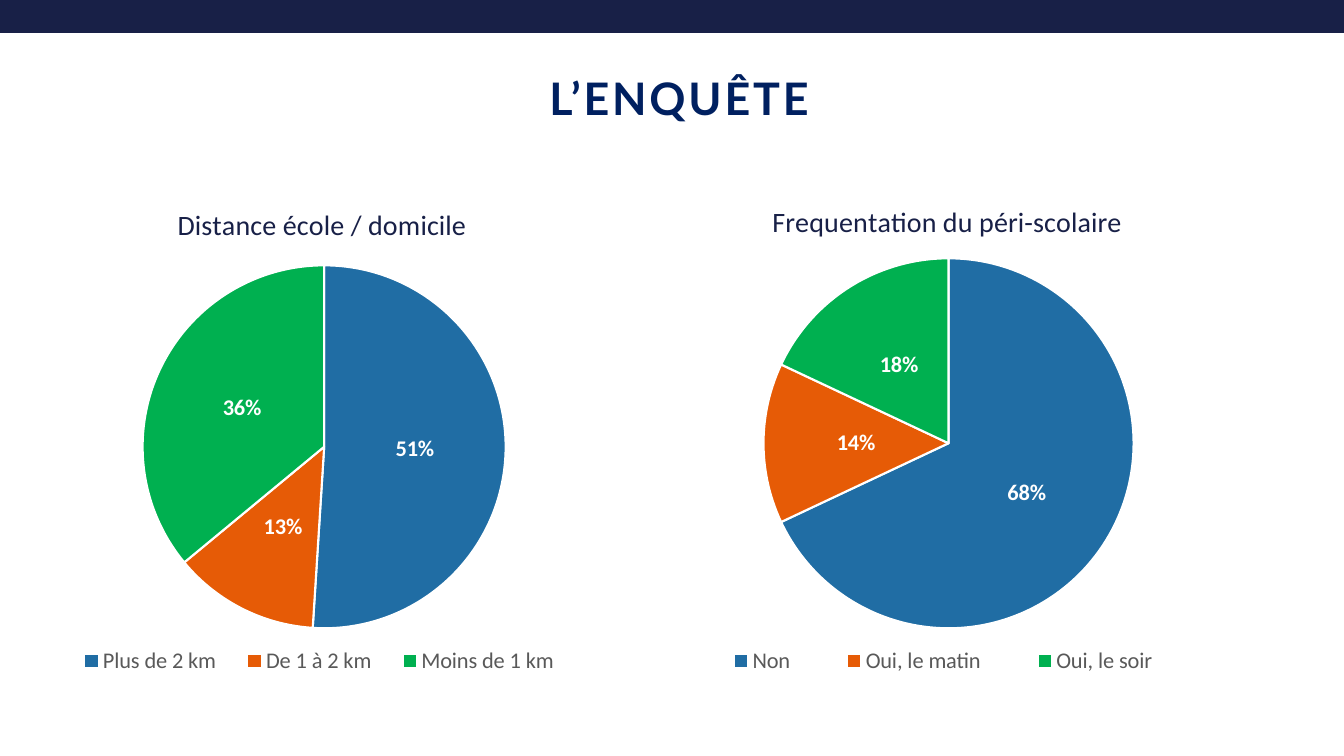
from dataclasses import dataclass, replace

from lxml import etree
from pptx import Presentation
from pptx import util as u
from pptx.chart.data import CategoryChartData
from pptx.dml.color import RGBColor
from pptx.enum import chart as charts, shapes, text
from pptx.oxml.ns import qn


@dataclass(frozen=True)
class Theme:
    navy: str = "182047"
    heading: str = "002060"
    grey: str = "595959"
    white: str = "FFFFFF"
    slices: tuple[str, ...] = ("206DA4", "E65B06", "00B050")
    heading_font: str = "Lato"
    chart_font: str = "Calibri"
    heading_size: int = 32
    question_size: int = 20
    label_size: int = 16


@dataclass(frozen=True)
class Area:
    """Percentages of the width and height of whatever holds the area."""
    left: float
    top: float
    width: float = 0
    height: float = 0

    def on_slide(self) -> tuple[int, int, int, int]:
        return (int(self.left * WIDTH / 100), int(self.top * HEIGHT / 100),
                int(self.width * WIDTH / 100), int(self.height * HEIGHT / 100))


@dataclass(frozen=True)
class Survey:
    question: str
    answers: dict[str, int]
    question_at: Area
    pie: Area


THEME = Theme()
WIDTH, HEIGHT = u.Inches(13.33), u.Inches(7.5)
BAR = Area(0, 0, 100, 4.2)
HEADING = Area(4.28, 4.4, 92.5, 17.1)
FIRST_CHART = Area(0.9, 24.4, 46.44, 66.5)
LEGEND = Area(7.7, 89.8, 83, 10)
SURVEYS = (
    Survey("Distance école / domicile",
           {"Plus de 2 km": 51, "De 1 à 2 km": 13, "Moins de 1 km": 36},
           Area(25.7, 3), Area(20.9, 16.1, 58.2, 72.2)),
    Survey("Frequentation du péri-scolaire",
           {"Non": 68, "Oui, le matin": 14, "Oui, le soir": 18},
           Area(21, 2.4), Area(20.4, 14.7, 59.3, 73.6)),
)


def style_font(font, *, size: int, color: str, name: str = THEME.chart_font,
               bold: bool = False) -> None:
    font.size, font.name, font.bold = u.Pt(size), name, bold
    font.color.rgb = RGBColor.from_string(color)


def write(frame, words: str, *, spacing: int = 0, **font_format) -> None:
    """Fill a text frame with one centred line; spacing is in points."""
    paragraph = frame.paragraphs[0]
    paragraph.alignment = text.PP_ALIGN.CENTER
    run = paragraph.add_run()
    run.text = words
    style_font(run.font, **font_format)
    if spacing:
        run.font._element.set("spc", str(spacing * 100))


def place(part, index: int, area: Area, inner: bool = False) -> None:
    """Give a chart part a manual layout as its child at index."""
    for old in part.findall(qn("c:layout")):
        part.remove(old)
    settings = {"layoutTarget": "inner"} if inner else {}
    settings |= {"xMode": "edge", "yMode": "edge",
                 "x": area.left / 100, "y": area.top / 100}
    if area.width:
        settings |= {"w": area.width / 100, "h": area.height / 100}
    layout = etree.Element(qn("c:layout"))
    manual = etree.SubElement(layout, qn("c:manualLayout"))
    for key, value in settings.items():
        etree.SubElement(manual, qn(f"c:{key}")).set("val", str(value))
    part.insert(index, layout)


def add_bar(slide) -> None:
    bar = slide.shapes.add_shape(shapes.MSO_SHAPE.RECTANGLE, *BAR.on_slide())
    bar.shadow.inherit = False
    bar.fill.solid()
    bar.fill.fore_color.rgb = bar.line.color.rgb = RGBColor.from_string(THEME.navy)
    bar.line.width = u.Pt(1.25)


def add_heading(slide, words: str) -> None:
    frame = slide.shapes.add_textbox(*HEADING.on_slide()).text_frame
    frame.word_wrap = True
    frame.vertical_anchor = text.MSO_ANCHOR.MIDDLE
    write(frame, words, size=THEME.heading_size, color=THEME.heading,
          name=THEME.heading_font, bold=True, spacing=2)


def add_survey(slide, survey: Survey, area: Area) -> None:
    data = CategoryChartData()
    data.categories = list(survey.answers)
    data.add_series("Series 1", list(survey.answers.values()))
    chart = slide.shapes.add_chart(
        charts.XL_CHART_TYPE.PIE, *area.on_slide(), data).chart
    style_font(chart.font, size=THEME.label_size, color=THEME.grey)

    chart.has_title = True
    write(chart.chart_title.text_frame, survey.question,
          size=THEME.question_size, color=THEME.navy)
    place(chart.chart_title._element, 1, survey.question_at)

    chart.has_legend = True
    chart.legend.position = charts.XL_LEGEND_POSITION.BOTTOM
    chart.legend.include_in_layout = False
    style_font(chart.legend.font, size=THEME.label_size, color=THEME.grey)
    place(chart.legend._element, 1, LEGEND)

    plot = chart.plots[0]
    plot.vary_by_categories = True
    place(plot._element.getparent(), 0, survey.pie, inner=True)
    for index, color in enumerate(THEME.slices):
        wedge = plot.series[0].points[index].format
        wedge.fill.solid()
        wedge.fill.fore_color.rgb = RGBColor.from_string(color)
        wedge.line.color.rgb = RGBColor.from_string(THEME.white)
        wedge.line.width = u.Pt(1.5)

    labels = plot.series[0].data_labels
    labels.show_percentage, labels.show_value = True, False
    labels.number_format, labels.number_format_is_linked = "0%", False
    labels.position = charts.XL_LABEL_POSITION.CENTER
    style_font(labels.font, size=THEME.label_size, color=THEME.white, bold=True)


def main() -> None:
    deck = Presentation()
    deck.slide_width, deck.slide_height = WIDTH, HEIGHT
    slide = deck.slides.add_slide(deck.slide_layouts[6])
    add_bar(slide)
    add_heading(slide, "L’ENQUÊTE")
    for column, survey in enumerate(SURVEYS):
        left = FIRST_CHART.left + column * FIRST_CHART.width
        add_survey(slide, survey, replace(FIRST_CHART, left=left))
    deck.save("out.pptx")


if __name__ == "__main__":
    main()
